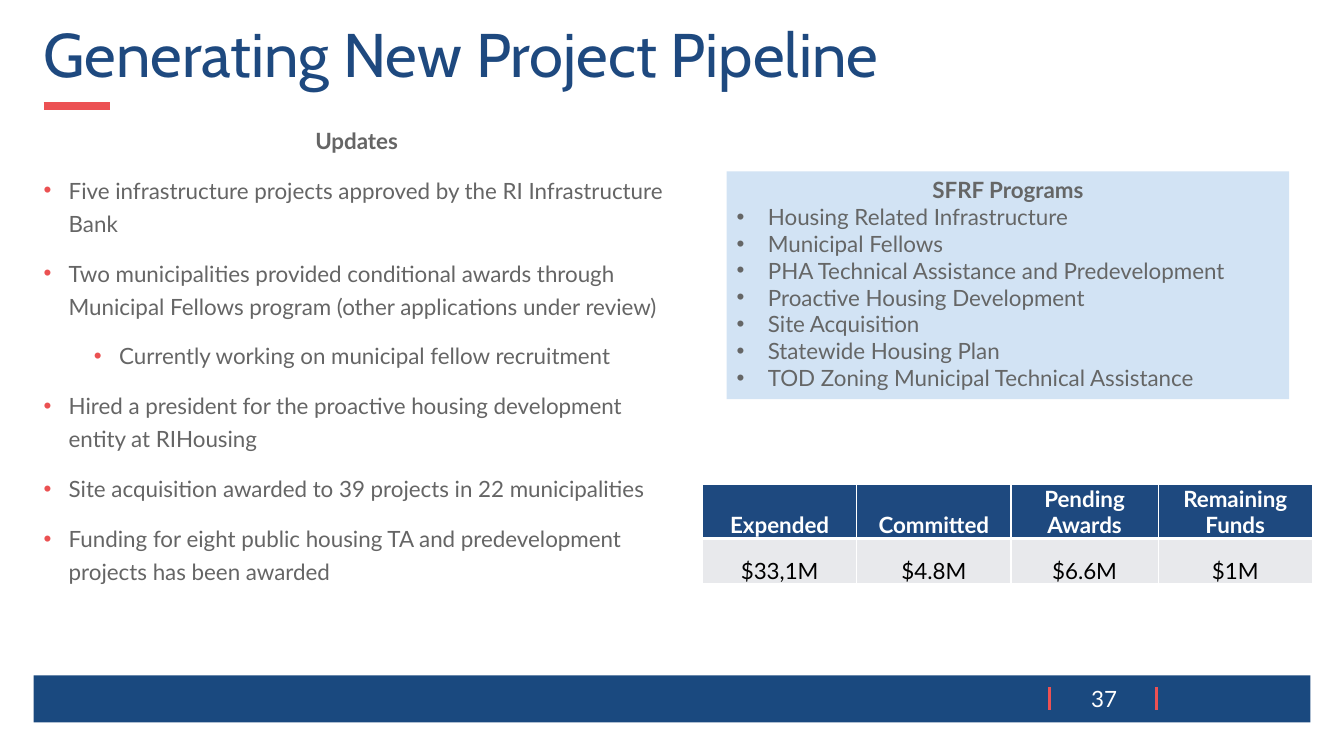
from dataclasses import dataclass

from lxml.etree import SubElement as Sub
from pptx import Presentation
from pptx.dml.color import RGBColor as Rgb
from pptx.enum.shapes import MSO_CONNECTOR as Conn, MSO_SHAPE as Kind
from pptx.enum.text import MSO_ANCHOR as Anchor, PP_ALIGN as Align
from pptx.oxml.ns import qn
from pptx.util import Inches, Pt

# Grid: 40 columns by 45 rows
WIDE, HIGH = Inches(13.33), Inches(7.5)
COLS, ROWS = 40, 45
NAVY, BLUE, RED, CORAL = "1E497F", "1A497F", "EC5153", "EB5152"
GREY, SLATE, SKY, PALE = "656565", "656666", "D2E3F4", "E8E9EC"
WHITE, BLACK = "FFFFFF", "000000"


@dataclass
class Box:
    left: float
    top: float
    wide: float
    high: float

    def place(self) -> tuple:
        return across(self.left), down(self.top), across(self.wide), down(self.high)


@dataclass
class Rule:
    start: tuple
    end: tuple
    weight: float


@dataclass
class Item:
    text: str
    level: int = 0


def across(cols: float) -> int:
    return round(WIDE * cols / COLS)


def down(rows: float) -> int:
    return round(HIGH * rows / ROWS)


def color(code: str) -> Rgb:
    return Rgb.from_string(code)


def style(para, code: str, size: float = 16, bold: bool = False, face: str = "Lato") -> None:
    for run in para.runs:
        font = run.font
        font.name, font.size, font.bold = face, Pt(size), bold
        font.color.rgb = color(code)


def bullet(para, margin: float, hang: float, code: str) -> None:
    props = para._p.get_or_add_pPr()
    props.set("marL", str(Inches(margin)))
    props.set("indent", str(-Inches(hang)))
    tint = Sub(props, qn("a:buClr"))
    Sub(tint, qn("a:srgbClr"), val=code)
    Sub(props, qn("a:buFont"), typeface="Arial")
    Sub(props, qn("a:buChar"), char="•")


def fill_list(frame, head: str, items: list, code: str, dot: str, hang: float,
              line: float = 1, gap: float = 0) -> None:
    frame.word_wrap = True
    frame.vertical_anchor = Anchor.TOP
    for spot, item in enumerate([Item(head)] + items):
        para = frame.add_paragraph() if spot else frame.paragraphs[0]
        para.text = item.text
        para.level = item.level
        para.alignment = Align.LEFT if spot else Align.CENTER
        if spot:
            bullet(para, hang + item.level / 2, hang, dot)
        para.line_spacing = line
        para.space_before = Pt(gap if spot else 0)
        para.space_after = Pt(gap)
        style(para, code, bold=not spot)


def block(slide, box: Box, code: str):
    shape = slide.shapes.add_shape(Kind.RECTANGLE, *box.place())
    shape.shadow.inherit = False
    shape.fill.solid()
    shape.fill.fore_color.rgb = color(code)
    shape.line.fill.background()
    return shape


def stroke(slide, rule: Rule) -> None:
    (x, y), (u, v) = rule.start, rule.end
    line = slide.shapes.add_connector(Conn.STRAIGHT, across(x), down(y), across(u), down(v))
    line.line.color.rgb = color(RED)
    line.line.width = Pt(rule.weight)
    Sub(line._element.spPr, qn("a:effectLst"))


def border(cell, low: float) -> None:
    props = cell._tc.get_or_add_tcPr()
    sides = {"a:lnL": 1, "a:lnR": 1, "a:lnT": 1, "a:lnB": low}
    for spot, (tag, size) in enumerate(sides.items()):
        edge = props.makeelement(qn(tag), {"w": str(Pt(size))})
        Sub(Sub(edge, qn("a:solidFill")), qn("a:srgbClr"), val=WHITE)
        props.insert(spot, edge)


def fund_table(slide, data: list, widths: list, heights: list) -> None:
    box = Box(20.91, 28.86, sum(widths), sum(heights))
    table = slide.shapes.add_table(len(data), len(widths), *box.place()).table
    for col, wide in zip(table.columns, widths):
        col.width = across(wide)
    for r, (row, high) in enumerate(zip(data, heights)):
        table.rows[r].height = down(high)
        head = r == 0
        for c, text in enumerate(row):
            cell = table.cell(r, c)
            cell.text = text
            cell.vertical_anchor = Anchor.BOTTOM
            cell.margin_left = cell.margin_right = 0
            cell.margin_top = cell.margin_bottom = 0
            cell.fill.solid()
            cell.fill.fore_color.rgb = color(NAVY if head else PALE)
            border(cell, 3 if head else 1)
            para = cell.text_frame.paragraphs[0]
            para.alignment = Align.CENTER
            style(para, WHITE if head else BLACK, bold=head)


UPDATES = [
    Item("Five infrastructure projects approved by the RI Infrastructure Bank"),
    Item("Two municipalities provided conditional awards through Municipal Fellows "
         "program (other applications under review)"),
    Item("Currently working on municipal fellow recruitment", 1),
    Item("Hired a president for the proactive housing development entity at RIHousing"),
    Item("Site acquisition awarded to 39 projects in 22 municipalities"),
    Item("Funding for eight public housing TA and predevelopment projects has been awarded"),
]
PLANS = [Item(name) for name in (
    "Housing Related Infrastructure", "Municipal Fellows",
    "PHA Technical Assistance and Predevelopment", "Proactive Housing Development",
    "Site Acquisition", "Statewide Housing Plan",
    "TOD Zoning Municipal Technical Assistance")]
FUNDS = [["Expended", "Committed", "Pending Awards", "Remaining Funds"],
         ["$33,1M", "$4.8M", "$6.6M", "$1M"]]
RULES = [Rule((1.3, 6.3), (3.27, 6.3), 6)] + [
    Rule((x, 40.92), (x, 42.24), 2.25) for x in (31.24, 34.42)]


def main() -> None:
    deck = Presentation()
    deck.slide_width, deck.slide_height = WIDE, HIGH
    slide = deck.slides.add_slide(deck.slide_layouts[5])

    # Footer bar and red rules
    block(slide, Box(1, 40.2, 38, 2.8), BLUE)
    for rule in RULES:
        stroke(slide, rule)

    # Title
    title = slide.shapes.title
    title.left, title.top, title.width, title.height = Box(1, 1.14, 38, 4.62).place()
    title.text_frame.text = "Generating New Project Pipeline"
    title.text_frame.vertical_anchor = Anchor.MIDDLE
    para = title.text_frame.paragraphs[0]
    para.alignment, para.line_spacing = Align.LEFT, 0.9
    style(para, NAVY, 44, face="Cabin")

    # Updates
    body = slide.shapes.add_textbox(*Box(1, 6.9, 19.23, 30).place())
    fill_list(body.text_frame, "Updates", UPDATES, GREY, CORAL, 0.25, 1.23, 6)

    # Page number
    page = slide.shapes.add_textbox(*Box(31.9, 40.5, 1.92, 2.22).place()).text_frame
    page.word_wrap = True
    page.text = "37"
    page.vertical_anchor = Anchor.MIDDLE
    page.paragraphs[0].alignment = Align.CENTER
    style(page.paragraphs[0], WHITE)

    # Funds and programs
    fund_table(slide, FUNDS, [4.59, 4.59, 4.38, 4.59], [3.2, 2.7])
    panel = block(slide, Box(21.63, 10.2, 16.74, 13.56), SKY)
    fill_list(panel.text_frame, "SFRF Programs", PLANS, SLATE, SLATE, 0.31)

    deck.save("out.pptx")


if __name__ == "__main__":
    main()
